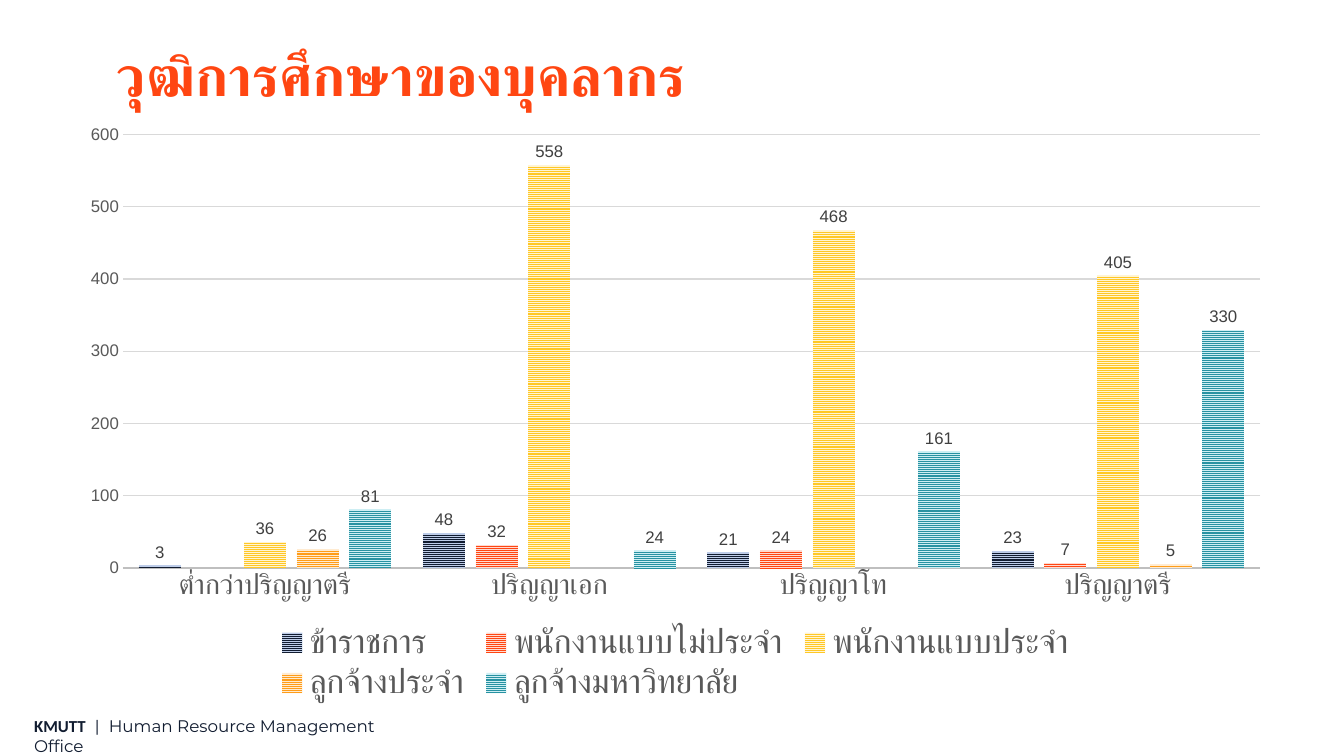
from pptx import Presentation
from pptx.chart.data import CategoryChartData
from pptx.dml.color import RGBColor
from pptx.enum.chart import XL_CHART_TYPE, XL_LABEL_POSITION, XL_LEGEND_POSITION, XL_TICK_MARK
from pptx.enum.dml import MSO_PATTERN
from pptx.enum.text import MSO_ANCHOR, MSO_AUTO_SIZE, PP_ALIGN
from pptx.util import Inches, Pt

HEADING = "วุฒิการศึกษาของบุคลากร"
DEGREES = ["ต่ำกว่าปริญญาตรี", "ปริญญาเอก", "ปริญญาโท", "ปริญญาตรี"]
# staff group, head count per degree, stripe colour, ground colour
STAFF = [
    ("ข้าราชการ", (3, 48, 21, 23), "111C30", "BDCCE8"),
    ("พนักงานแบบไม่ประจำ", (None, 32, 24, 7), "FF4612", "FFDAD0"),
    ("พนักงานแบบประจำ", (36, 558, 468, 405), "FFC826", "FFF4D4"),
    ("ลูกจ้างประจำ", (26, None, None, 5), "FF9D19", "FFEBD1"),
    ("ลูกจ้างมหาวิทยาลัย", (81, 24, 161, 330), "2792A2", "CDEEF3"),
]
NAVY = "111C30"
FOOTER = [
    ("KMUTT", {"name": "Calibri", "bold": True}),
    ("  |  ", {"name": "Calibri", "bold": False}),
    ("Human Resource Management Office", {"name": "Montserrat", "bold": False}),
]

# left, top, width, height as shares of the slide
WIDTH, HEIGHT = Inches(13.33), Inches(7.5)
TITLE_AREA = (1.06 / 13.33, 0.38 / 7.5, 5.88 / 13.33, 0.1)
CHART_AREA = (0.66 / 13.33, 1.13 / 7.5, 12.08 / 13.33, 5.88 / 7.5)
FOOTER_AREA = (0.24 / 13.33, 0.94, 3.62 / 13.33, 0.04)


def rgb(value):
    return RGBColor.from_string(value)


def place(area):
    """Turn shares of the slide into left, top, width, height."""
    return [round(share * side) for share, side in zip(area, (WIDTH, HEIGHT) * 2)]


def apply(target, **values):
    for attribute, value in values.items():
        setattr(target, attribute, value)


def style(font, size, color, name="Arial", bold=False):
    apply(font, size=Pt(size), name=name, bold=bold)
    font.color.rgb = rgb(color)


def draw_line(line, color, width):
    line.color.rgb = rgb(color)
    line.width = Pt(width)


def add_title(slide):
    title = slide.shapes.title
    apply(title, **dict(zip(("left", "top", "width", "height"), place(TITLE_AREA))))
    frame = title.text_frame
    frame.text = HEADING
    apply(frame, auto_size=MSO_AUTO_SIZE.NONE, word_wrap=True,
          vertical_anchor=MSO_ANCHOR.BOTTOM)
    apply(frame.paragraphs[0], alignment=PP_ALIGN.LEFT, line_spacing=0.9)
    style(frame.paragraphs[0].runs[0].font, 40, "FF4612", "Lato", True)


def add_staff_chart(slide):
    counts = CategoryChartData()
    counts.categories = DEGREES
    for group, values, *_ in STAFF:
        counts.add_series(group, values)
    chart = slide.shapes.add_chart(
        XL_CHART_TYPE.COLUMN_CLUSTERED, *place(CHART_AREA), counts).chart
    style(chart.font, 10, "000000")
    apply(chart, has_title=False, has_legend=True)
    apply(chart.legend, position=XL_LEGEND_POSITION.BOTTOM, include_in_layout=False)
    style(chart.legend.font, 24, "595959")

    for axis, size in ((chart.category_axis, 20), (chart.value_axis, 12)):
        apply(axis, major_tick_mark=XL_TICK_MARK.NONE, minor_tick_mark=XL_TICK_MARK.NONE)
        style(axis.tick_labels.font, size, "595959")
    draw_line(chart.category_axis.format.line, "BFBFBF", 1.5)
    chart.value_axis.format.line.fill.background()
    draw_line(chart.value_axis.major_gridlines.format.line, "D9D9D9", 0.75)

    plot = chart.plots[0]
    apply(plot, gap_width=75, overlap=-25, vary_by_categories=False)
    for series, (_, _, stripe, ground) in zip(plot.series, STAFF):
        series.invert_if_negative = False
        fill = series.format.fill
        fill.patterned()
        fill.pattern = MSO_PATTERN.NARROW_HORIZONTAL
        fill.fore_color.rgb = rgb(stripe)
        fill.back_color.rgb = rgb(ground)
        labels = series.data_labels
        apply(labels, show_value=True, position=XL_LABEL_POSITION.OUTSIDE_END)
        style(labels.font, 12, "404040")


def add_footer(slide):
    frame = slide.shapes.add_textbox(*place(FOOTER_AREA)).text_frame
    apply(frame, word_wrap=True, auto_size=MSO_AUTO_SIZE.SHAPE_TO_FIT_TEXT)
    for words, look in FOOTER:
        run = frame.paragraphs[0].add_run()
        run.text = words
        style(run.font, 12, NAVY, **look)


def main():
    deck = Presentation()
    apply(deck, slide_width=WIDTH, slide_height=HEIGHT)
    slide = deck.slides.add_slide(deck.slide_layouts.get_by_name("Title Only"))
    add_footer(slide)
    add_title(slide)
    add_staff_chart(slide)
    deck.save("out.pptx")


if __name__ == "__main__":
    main()
